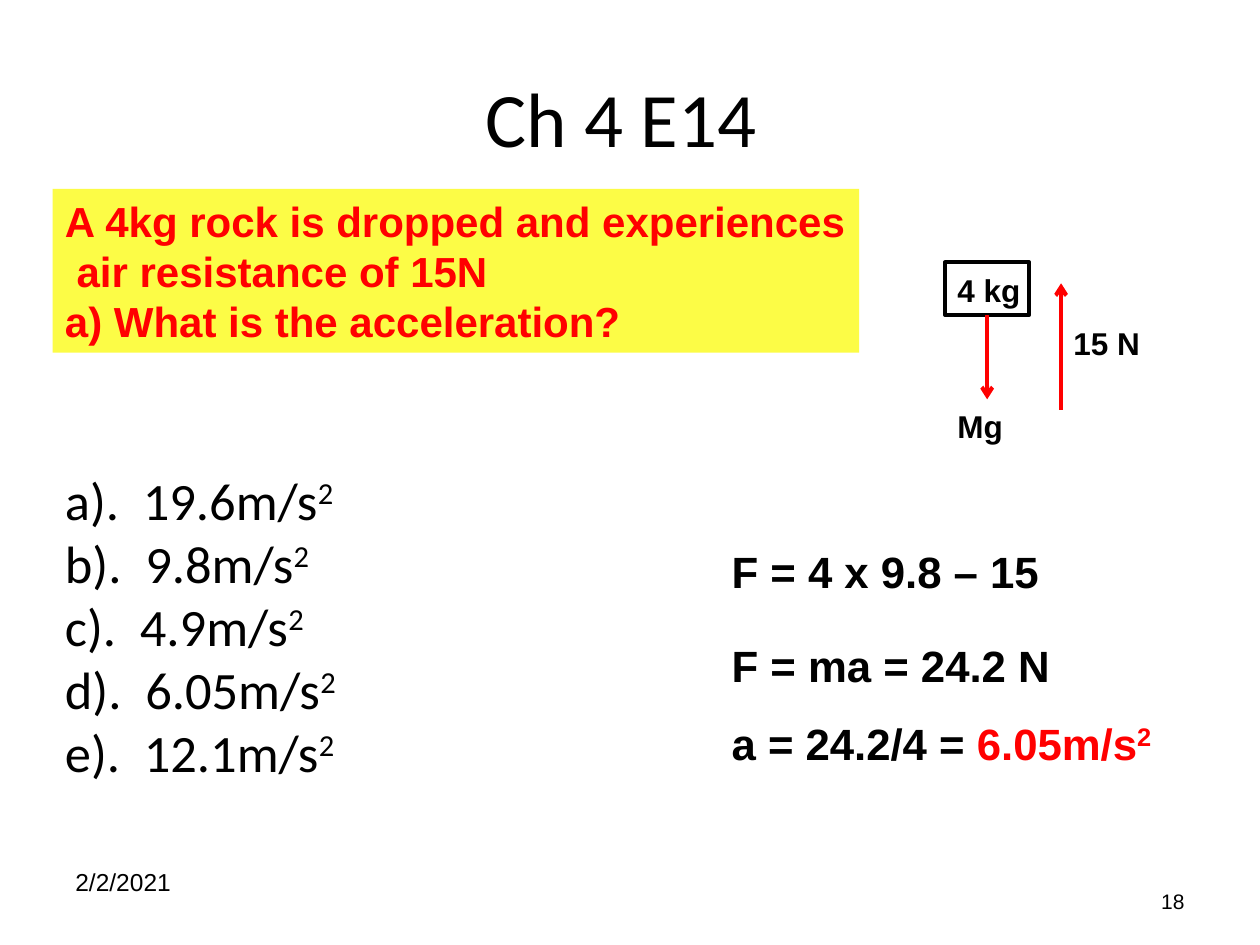
from lxml.etree import SubElement
from pptx import Presentation
from pptx.dml.color import RGBColor
from pptx.enum.shapes import MSO_CONNECTOR, MSO_SHAPE
from pptx.enum.text import MSO_ANCHOR, PP_ALIGN
from pptx.oxml.ns import qn
from pptx.util import Cm, Pt

COLORS = {"ink": "000000", "accent": "FF0000", "highlight": "FCFC46"}

# A paragraph is a list of (text, changes to the base format).
QUESTION = [
    [("A 4kg rock is dropped and experiences", {})],
    [(" air resistance of 15N", {})],
    [("a) What is the acceleration?", {})],
]
ANSWERS = ["a).  19.6m/s", "b).  9.8m/s", "c).  4.9m/s", "d).  6.05m/s", "e).  12.1m/s"]
SUPER = {"raised": True}
RED = {"color": "accent"}
RESULT = [
    [("F = ma = 24.2 N", {})],
    [("a = 24.2/4 = ", {}), ("6.05m/s", RED), ("2", RED | SUPER)],
]

HEADING = {"name": "Calibri", "size": Pt(44)}
CHOICE = {"name": "Calibri", "size": Pt(30)}
PROBLEM = {"name": "Arial", "size": Pt(24), "bold": True, "color": "accent"}
WORKING = {"name": "Arial", "size": Pt(25), "bold": True}
LABEL = {"name": "Arial", "size": Pt(18), "bold": True}
DATE = {"name": "Arial", "size": Pt(14)}
NUMBER = {"name": "Arial", "size": Pt(12)}

# paragraphs, (left, top, width, height) in cm, base format, paragraph format, anchor
TEXTS = [
    ([[("18", {})]], (18.21, 17.65, 5.92, 1.02), NUMBER,
     {"alignment": PP_ALIGN.RIGHT}, MSO_ANCHOR.MIDDLE),
    ([[("2/2/2021", {})]], (1.27, 17.35, 5.92, 1.32), DATE, {}, MSO_ANCHOR.TOP),
    ([[("F = 4 x 9.8 – 15", {})]], (14.5, 10.85, 7.42, 1.32), WORKING, {}, MSO_ANCHOR.TOP),
    (RESULT, (14.5, 12.75, 10.59, 2.9), WORKING, {"space_before": Pt(14.4)}, MSO_ANCHOR.TOP),
    ([[("4 kg", {})]], (19.05, 5.33, 1.9, 1.02), LABEL, {}, MSO_ANCHOR.TOP),
    ([[("Mg", {})]], (19.05, 8.08, 1.7, 1.02), LABEL, {}, MSO_ANCHOR.TOP),
    ([[("15 N", {})]], (21.39, 6.4, 2.11, 1.02), LABEL, {}, MSO_ANCHOR.TOP),
    ([[("Ch 4 E14 ", {})]], (1.27, 0.76, 22.86, 3.18), HEADING,
     {"alignment": PP_ALIGN.CENTER}, MSO_ANCHOR.MIDDLE),
    ([[(answer, {}), ("2", SUPER)] for answer in ANSWERS],
     (1.06, 9.31, 11.22, 7.2), CHOICE, {}, MSO_ANCHOR.TOP),
]
QUESTION_PLACE = (1.06, 3.81, 16.26, 3.3)
ROCK_PLACE = (19.05, 5.29, 1.7, 1.06)
WEIGHT_TIP = 8.05
DRAG_X, DRAG_START, DRAG_TIP = 21.39, 8.26, 5.71


def color(key):
    return RGBColor.from_string(COLORS[key])


def cm(lengths):
    return [Cm(length) for length in lengths]


def write(frame, paragraphs, base, layout, anchor):
    frame.vertical_anchor = anchor
    for index, pieces in enumerate(paragraphs):
        paragraph = frame.add_paragraph() if index else frame.paragraphs[0]
        paragraph.alignment = layout.get("alignment", PP_ALIGN.LEFT)
        if index and "space_before" in layout:
            paragraph.space_before = layout["space_before"]
        for text, changes in pieces:
            style = {"color": "ink"} | base | changes
            run = paragraph.add_run()
            run.text = text
            run.font.color.rgb = color(style.pop("color"))
            if style.pop("raised", False):
                run._r.get_or_add_rPr().set("baseline", "30000")
            for key, value in style.items():
                setattr(run.font, key, value)


def add_rectangle(slide, place):
    rectangle = slide.shapes.add_shape(MSO_SHAPE.RECTANGLE, *cm(place))
    rectangle.shadow.inherit = False
    return rectangle


def add_force(slide, x, start, tip):
    force = slide.shapes.add_connector(MSO_CONNECTOR.STRAIGHT, *cm((x, start, x, tip)))
    force.line.color.rgb = color("accent")
    force.line.width = Pt(2.25)
    SubElement(force.line._get_or_add_ln(), qn("a:tailEnd"), type="arrow")
    SubElement(force._element.spPr, qn("a:effectLst"))
    return force


def main():
    deck = Presentation()
    deck.slide_width, deck.slide_height = cm((25.4, 19.05))
    slide = deck.slides.add_slide(deck.slide_layouts[6])

    rock = add_rectangle(slide, ROCK_PLACE)
    rock.fill.background()
    rock.line.color.rgb = color("ink")
    rock.line.width = Pt(2.25)
    left, top, width, height = ROCK_PLACE
    weight = add_force(slide, left + width / 2, top + height, WEIGHT_TIP)
    weight.begin_connect(rock, 2)
    add_force(slide, DRAG_X, DRAG_START, DRAG_TIP)

    question = add_rectangle(slide, QUESTION_PLACE)
    question.fill.solid()
    question.fill.fore_color.rgb = color("highlight")
    question.line.fill.background()
    question.text_frame.word_wrap = False
    write(question.text_frame, QUESTION, PROBLEM, {}, MSO_ANCHOR.TOP)

    for paragraphs, place, base, layout, anchor in TEXTS:
        frame = slide.shapes.add_textbox(*cm(place)).text_frame
        frame.word_wrap = True
        write(frame, paragraphs, base, layout, anchor)

    deck.save("out.pptx")


if __name__ == "__main__":
    main()
